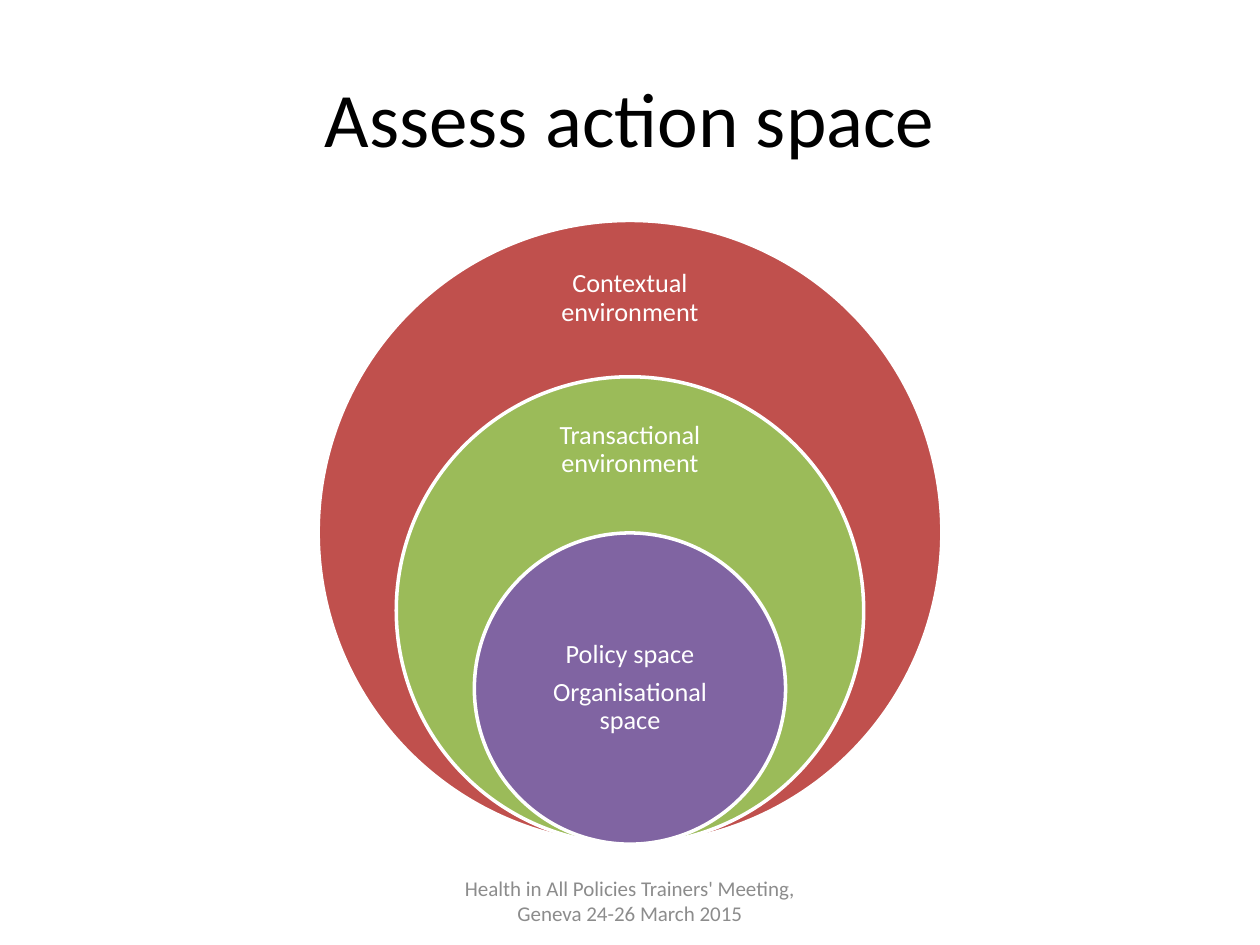
from pptx import Presentation
from pptx.dml.color import RGBColor
from pptx.enum.shapes import MSO_SHAPE as SHAPE
from pptx.enum.text import MSO_ANCHOR as ANCHOR, PP_ALIGN as ALIGN
from pptx.util import Inches, Pt

TITLE = "Assess action space"
FOOTER = "Health in All Policies Trainers' Meeting, Geneva 24-26 March 2015"
RINGS = [
    {"diameter": 4.95, "color": "ring1", "label": ["Contextual environment"], "box": (2.0, 1.73, 0.74)},
    {"diameter": 3.71, "color": "ring2", "label": ["Transactional environment"], "box": (3.22, 1.73, 0.7)},
    {"diameter": 2.47, "color": "ring3", "label": ["Policy space", "Organisational space"],
     "box": (4.84, 1.75, 1.24)},
]
THEME = {
    "font": "Calibri", "title_size": 44, "label_size": 15, "footer_size": 12,
    "title": "000000", "label": "FFFFFF", "footer": "8C8C8C", "outline": "FFFFFF",
    "ring1": "C0504D", "ring2": "9BBB59", "ring3": "8064A2",
}
CENTER, RINGS_BOTTOM = 5, 6.7


def color(name):
    """Return a theme colour."""
    return RGBColor.from_string(THEME[name])


def add_text(s, top, width, height, lines, role, inset=(0.1, 0.05), spacing=1.0):
    """Add a centred text box with one paragraph per line."""
    tf = s.shapes.add_textbox(Inches(CENTER - width / 2), Inches(top),
                              Inches(width), Inches(height)).text_frame
    tf.word_wrap = True
    tf.vertical_anchor = ANCHOR.MIDDLE
    tf.margin_left = tf.margin_right = Inches(inset[0])
    tf.margin_top = tf.margin_bottom = Inches(inset[1])
    for i, line in enumerate(lines):
        p = tf.add_paragraph() if i else tf.paragraphs[0]
        p.alignment = ALIGN.CENTER
        p.line_spacing = spacing
        p.space_before = Pt(5.4 if i else 0)
        r = p.add_run()
        r.text = line
        r.font.name = THEME["font"]
        r.font.size = Pt(THEME[f"{role}_size"])
        r.font.color.rgb = color(role)


def add_ring(s, ring):
    """Add a circle resting on the common bottom line, with its label."""
    d = ring["diameter"]
    sp = s.shapes.add_shape(SHAPE.OVAL, Inches(CENTER - d / 2), Inches(RINGS_BOTTOM - d),
                            Inches(d), Inches(d))
    sp.shadow.inherit = False
    sp.fill.solid()
    sp.fill.fore_color.rgb = color(ring["color"])
    sp.line.color.rgb = color("outline")
    sp.line.width = Pt(2)
    add_text(s, *ring["box"], ring["label"], "label", inset=(0.12, 0.12), spacing=0.9)


def main():
    """Build the slide and save it."""
    prs = Presentation()
    prs.slide_width, prs.slide_height = Inches(10), Inches(7.5)
    s = prs.slides.add_slide(prs.slide_layouts[6])
    add_text(s, 0.3, 9, 1.25, [TITLE], "title")
    for ring in RINGS:
        add_ring(s, ring)
    add_text(s, 6.95, 3.17, 0.4, [FOOTER], "footer", inset=(0.1, 0))
    prs.save("out.pptx")


if __name__ == "__main__":
    main()
